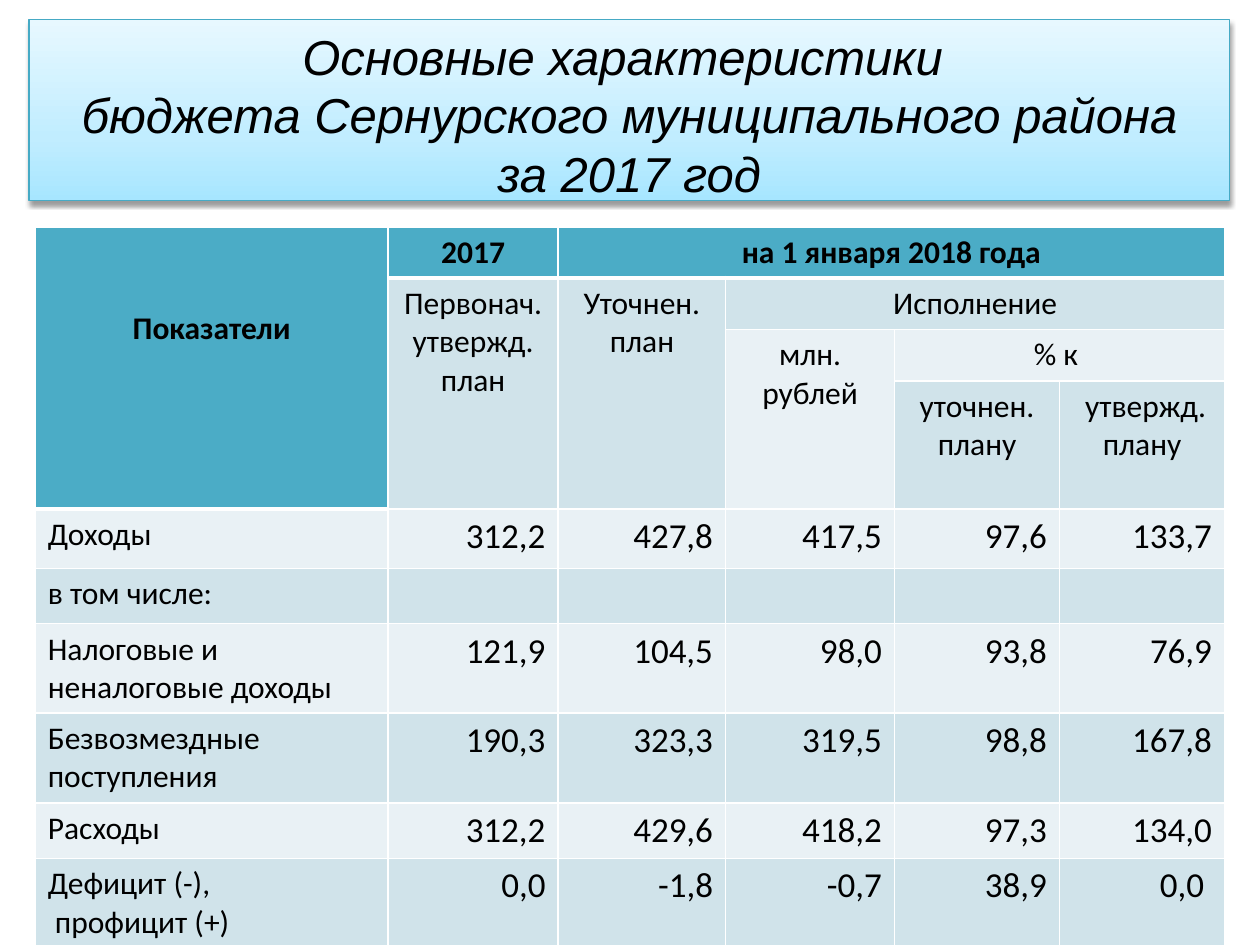
from pptx import Presentation
from pptx import util as u
from pptx.dml.color import RGBColor
from pptx.enum import shapes, text
from pptx.oxml import parse_xml
from pptx.oxml.ns import nsdecls

BLACK = RGBColor(0x00, 0x00, 0x00)
WHITE = RGBColor(0xFF, 0xFF, 0xFF)
TEAL = RGBColor(0x4B, 0xAC, 0xC6)
EDGE = RGBColor(0x46, 0xAA, 0xC5)
BAND = RGBColor(0xD0, 0xE3, 0xEA)
PALE = RGBColor(0xE9, 0xF1, 0xF5)
SKY = [(0, RGBColor(0xA7, 0xE6, 0xFF)), (35, RGBColor(0xC1, 0xED, 0xFF)),
       (100, RGBColor(0xE7, 0xF8, 0xFF))]

C, L, R = text.PP_ALIGN.CENTER, text.PP_ALIGN.LEFT, text.PP_ALIGN.RIGHT
TITLE = dict(name="Arial", size=u.Pt(28), italic=True)
LABEL = dict(name="Calibri", size=u.Pt(18), bold=False)
HEAD = dict(LABEL, bold=True)
NUMBER = dict(LABEL, size=u.Pt(20))

COLS = [2.8, 1.35, 1.33, 1.34, 1.31, 1.31]
ROWS = [0.36, 0.41, 0.41, 0.74, 0.47, 0.44, 0.61, 0.41, 0.39, 0.41]
HEAD_ROWS = 4

# row, column, rows spanned, columns spanned, text, style
HEADINGS = [
    (0, 0, 4, 1, "Показатели", HEAD),
    (0, 1, 1, 1, "2017", HEAD),
    (0, 2, 1, 4, "на 1 января 2018 года", HEAD),
    (1, 1, 3, 1, "Первонач. утвержд. план", LABEL),
    (1, 2, 3, 1, "Уточнен.\nплан", LABEL),
    (1, 3, 1, 3, "Исполнение", LABEL),
    (2, 3, 2, 1, "млн. рублей", LABEL),
    (2, 4, 1, 2, "% к ", LABEL),
    (3, 4, 1, 1, "уточнен. плану", LABEL),
    (3, 5, 1, 1, " утвержд. плану", LABEL),
]
DATA = [
    ("Доходы", "312,2", "427,8", "417,5", "97,6", "133,7"),
    ("в том числе:",),
    ("Налоговые и неналоговые доходы", "121,9", "104,5", "98,0", "93,8", "76,9"),
    ("Безвозмездные поступления", "190,3", "323,3", "319,5", "98,8", "167,8"),
    ("Расходы", "312,2", "429,6", "418,2", "97,3", "134,0"),
    ("Дефицит (-),\n профицит (+)", "0,0", "-1,8", "-0,7", "38,9", "0,0 "),
]


def is_head(row, col):
    return row == 0 or (col == 0 and 0 <= row < HEAD_ROWS)


class Deck:
    """Holds the presentation, its current slide and the drawing style."""

    def __init__(self, width, height):
        self.prs = Presentation()
        self.prs.slide_width, self.prs.slide_height = u.Inches(width), u.Inches(height)
        self.s = self.prs.slides.add_slide(self.prs.slide_layouts[6])

    def share(self, x, y, w, h):
        pw, ph = self.prs.slide_width, self.prs.slide_height
        return [int(v / 100 * full) for v, full in zip((x, y, w, h), (pw, ph, pw, ph))]

    def add_lines(self, tf, content, align, style):
        for i, line in enumerate(content.split("\n")):
            p = tf.add_paragraph() if i else tf.paragraphs[0]
            p.alignment = align
            r = p.add_run()
            r.text = line
            for key, value in style.items():
                setattr(r.font, key, value)
            r.font.color.rgb = BLACK

    def banner(self, box, content):
        sp = self.s.shapes.add_shape(shapes.MSO_SHAPE.RECTANGLE, *self.share(*box))
        sp.line.color.rgb, sp.line.width = EDGE, u.Pt(0.75)
        # Three-stop gradient running upwards, and a soft shadow below
        stops = "".join(f'<a:gs pos="{at * 1000}"><a:srgbClr val="{c}"/></a:gs>'
                        for at, c in SKY)
        pr = sp.element.spPr
        pr.insert(2, parse_xml(f'<a:gradFill {nsdecls("a")}><a:gsLst>{stops}</a:gsLst>'
                               '<a:lin ang="16200000" scaled="1"/></a:gradFill>'))
        pr.append(parse_xml(
            f'<a:effectLst {nsdecls("a")}><a:outerShdw blurRad="{u.Pt(3.1)}" '
            f'dist="{u.Pt(1.6)}" dir="5400000" rotWithShape="0">'
            f'<a:srgbClr val="{BLACK}"><a:alpha val="38000"/></a:srgbClr>'
            '</a:outerShdw></a:effectLst>'))
        tf = sp.text_frame
        tf.word_wrap = False
        tf.vertical_anchor = text.MSO_ANCHOR.TOP
        self.add_lines(tf, content, C, TITLE)

    def borders(self, cell, row, col):
        thick = {"T": is_head(row - 1, col), "B": is_head(row, col)}
        for side in "LRTB":
            width = u.Pt(3 if thick.get(side) else 1)
            cell._tc.get_or_add_tcPr().append(parse_xml(
                f'<a:ln{side} {nsdecls("a")} w="{width}"><a:solidFill>'
                f'<a:srgbClr val="{WHITE}"/></a:solidFill></a:ln{side}>'))

    def table(self, box, cols, rows):
        tbl = self.s.shapes.add_table(len(rows), len(cols), *self.share(*box)).table
        tbl.first_row = tbl.horz_banding = False
        for col, width in zip(tbl.columns, cols):
            col.width = u.Inches(width)
        for row, height in zip(tbl.rows, rows):
            row.height = u.Inches(height)
        for i in range(len(rows)):
            for j in range(len(cols)):
                cell = tbl.cell(i, j)
                self.borders(cell, i, j)
                cell.fill.solid()
                cell.fill.fore_color.rgb = (TEAL if is_head(i, j)
                                            else BAND if i % 2 else PALE)
        return tbl


def main():
    deck = Deck(10, 7.5)

    # Budget table: merged headings, then one row per indicator
    tbl = deck.table((2.8, 24, 94.4, 61.2), COLS, ROWS)
    for i, j, down, across, content, style in HEADINGS:
        cell = tbl.cell(i, j)
        if down * across > 1:
            cell.merge(tbl.cell(i + down - 1, j + across - 1))
        deck.add_lines(cell.text_frame, content, C, style)
    tbl.cell(0, 0).margin_top = u.Inches(0.66)
    for i, values in enumerate(DATA, HEAD_ROWS):
        for j, value in enumerate(values):
            align, style = (R, NUMBER) if j else (L, LABEL)
            deck.add_lines(tbl.cell(i, j).text_frame, value, align, style)

    # Title banner
    deck.banner((2.3, 2.1, 95.3, 19.1),
                "Основные характеристики \n"
                "бюджета Сернурского муниципального района\nза 2017 год")
    deck.prs.save("out.pptx")


if __name__ == "__main__":
    main()
